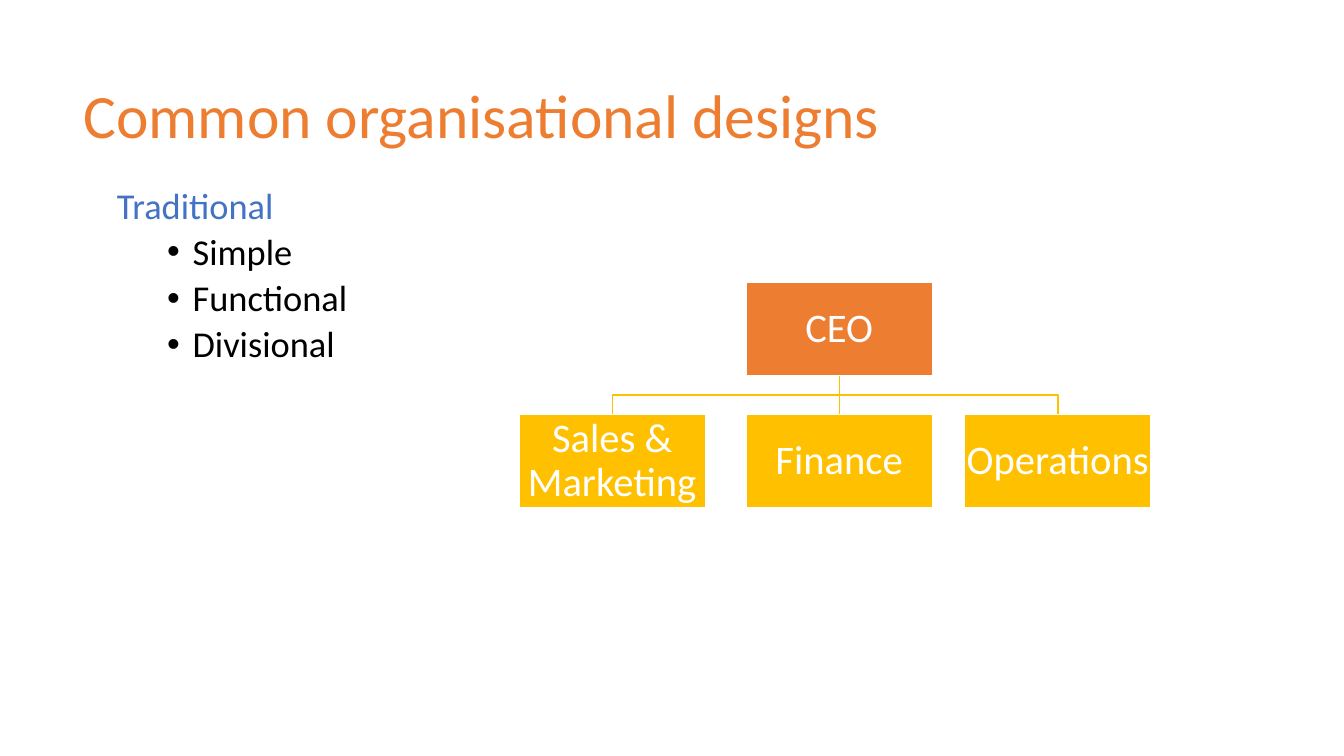
from dataclasses import dataclass

from lxml import etree
from pptx import Presentation, util as u
from pptx.dml.color import RGBColor
from pptx.enum import shapes, text
from pptx.oxml.ns import qn
from pptx.shapes.autoshape import Shape
from pptx.slide import Slide
from pptx.text.text import TextFrame, _Paragraph as Paragraph


@dataclass(frozen=True)
class Theme:
    font: str = "Calibri"
    orange: RGBColor = RGBColor(0xED, 0x7D, 0x31)
    blue: RGBColor = RGBColor(0x44, 0x72, 0xC4)
    gold: RGBColor = RGBColor(0xFF, 0xC0, 0x00)
    black: RGBColor = RGBColor(0, 0, 0)
    white: RGBColor = RGBColor(255, 255, 255)
    title_size: int = 44
    list_size: int = 26
    box_size: int = 29
    line_width: int = 1
    line_spacing: float = 0.9


@dataclass(frozen=True)
class Position:
    label: str
    left: float
    top: float
    fill: RGBColor


@dataclass(frozen=True)
class ListItem:
    label: str
    color: RGBColor
    level: int
    space_before: int
    margin: float
    indent: float
    bullet: str


THEME = Theme()
BOX_WIDTH, BOX_HEIGHT = 4.7, 2.36
TOP_ROW, BOTTOM_ROW = 7.11, 10.44

CHIEF = Position("CEO", 18.8, TOP_ROW, THEME.orange)
DEPARTMENTS = [
    Position(label, left, BOTTOM_ROW, THEME.gold)
    for label, left in [("Sales & Marketing", 13.08), ("Finance", CHIEF.left), ("Operations", 24.31)]
]
DESIGNS = [ListItem("Traditional", THEME.blue, 0, 10, 0, 0, "")] + [
    ListItem(label, THEME.black, 1, 5, 1.91, -0.64, "•")
    for label in ("Simple", "Functional", "Divisional")
]


def place(shape: Shape, left: float, top: float, width: float, height: float) -> None:
    shape.left, shape.top = u.Cm(left), u.Cm(top)
    shape.width, shape.height = u.Cm(width), u.Cm(height)


def prepare_frame(shape: Shape, anchor: text.MSO_ANCHOR) -> TextFrame:
    frame = shape.text_frame
    frame.word_wrap = True
    frame.auto_size = text.MSO_AUTO_SIZE.NONE
    frame.vertical_anchor = anchor
    return frame


def write(paragraph: Paragraph, label: str, size: int, color: RGBColor,
          alignment: text.PP_ALIGN) -> None:
    paragraph.alignment = alignment
    paragraph.line_spacing = THEME.line_spacing
    run = paragraph.add_run()
    run.text = label
    run.font.name = THEME.font
    run.font.size = u.Pt(size)
    run.font.color.rgb = color


def set_bullet(paragraph: Paragraph, item: ListItem) -> None:
    properties = paragraph._p.get_or_add_pPr()
    properties.set("marL", str(u.Cm(item.margin)))
    properties.set("indent", str(u.Cm(item.indent)))
    if item.bullet:
        etree.SubElement(properties, qn("a:buFont")).set("typeface", "Arial")
        etree.SubElement(properties, qn("a:buChar")).set("char", item.bullet)
    else:
        etree.SubElement(properties, qn("a:buNone"))


def fill_title(slide: Slide) -> None:
    title = slide.shapes.title
    place(title, 1.85, 1.8, 24.31, 2.39)
    frame = prepare_frame(title, text.MSO_ANCHOR.MIDDLE)
    write(frame.paragraphs[0], "Common organisational designs", THEME.title_size,
          THEME.orange, text.PP_ALIGN.LEFT)


def fill_list(slide: Slide) -> None:
    body = slide.placeholders[1]
    place(body, 2.69, 4.6, 9.35, 12.75)
    frame = prepare_frame(body, text.MSO_ANCHOR.TOP)
    for index, item in enumerate(DESIGNS):
        paragraph = frame.add_paragraph() if index else frame.paragraphs[0]
        paragraph.level = item.level
        paragraph.space_before = u.Pt(item.space_before)
        write(paragraph, item.label, THEME.list_size, item.color, text.PP_ALIGN.LEFT)
        set_bullet(paragraph, item)


def add_box(slide: Slide, position: Position) -> Shape:
    box = slide.shapes.add_shape(
        shapes.MSO_SHAPE.RECTANGLE, u.Cm(position.left), u.Cm(position.top),
        u.Cm(BOX_WIDTH), u.Cm(BOX_HEIGHT))
    box.shadow.inherit = False
    box.fill.solid()
    box.fill.fore_color.rgb = position.fill
    box.line.color.rgb = THEME.white
    box.line.width = u.Pt(THEME.line_width)
    frame = prepare_frame(box, text.MSO_ANCHOR.MIDDLE)
    frame.margin_left = frame.margin_right = u.Cm(0.05)
    frame.margin_top = frame.margin_bottom = u.Cm(0.05)
    write(frame.paragraphs[0], position.label, THEME.box_size, THEME.white,
          text.PP_ALIGN.CENTER)
    return box


def link(slide: Slide, chief: Shape, department: Shape) -> None:
    start_x, start_y = chief.left + chief.width // 2, chief.top + chief.height
    end_x, end_y = department.left + department.width // 2, department.top
    if start_x == end_x:
        branch = slide.shapes.add_connector(
            shapes.MSO_CONNECTOR.STRAIGHT, start_x, start_y, end_x, end_y)
        branch.begin_connect(chief, 2)
        branch.end_connect(department, 0)
        etree.SubElement(branch._element.spPr, qn("a:effectLst"))
    else:
        middle_y = (start_y + end_y) // 2
        builder = slide.shapes.build_freeform(start_x, start_y)
        builder.add_line_segments(
            [(start_x, middle_y), (end_x, middle_y), (end_x, end_y)], close=False)
        branch = builder.convert_to_shape()
        branch.fill.background()
        branch.shadow.inherit = False
    branch.line.color.rgb = THEME.gold
    branch.line.width = u.Pt(THEME.line_width)


def main() -> None:
    presentation = Presentation()
    presentation.slide_width, presentation.slide_height = u.Cm(33.87), u.Cm(19.05)
    slide = presentation.slides.add_slide(presentation.slide_layouts[1])
    fill_title(slide)
    fill_list(slide)
    chief = add_box(slide, CHIEF)
    for position in DEPARTMENTS:
        link(slide, chief, add_box(slide, position))
    presentation.save("out.pptx")


if __name__ == "__main__":
    main()
